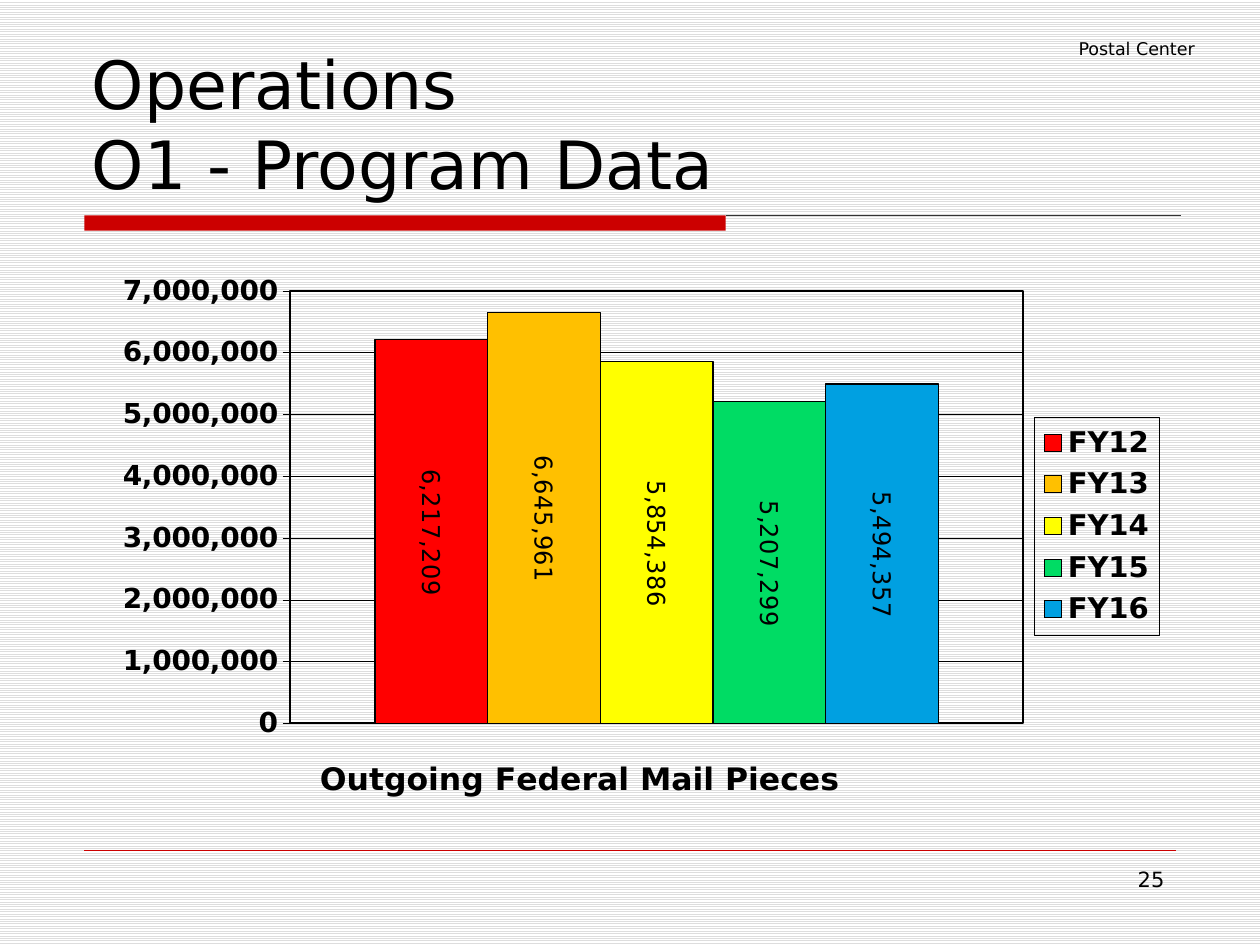
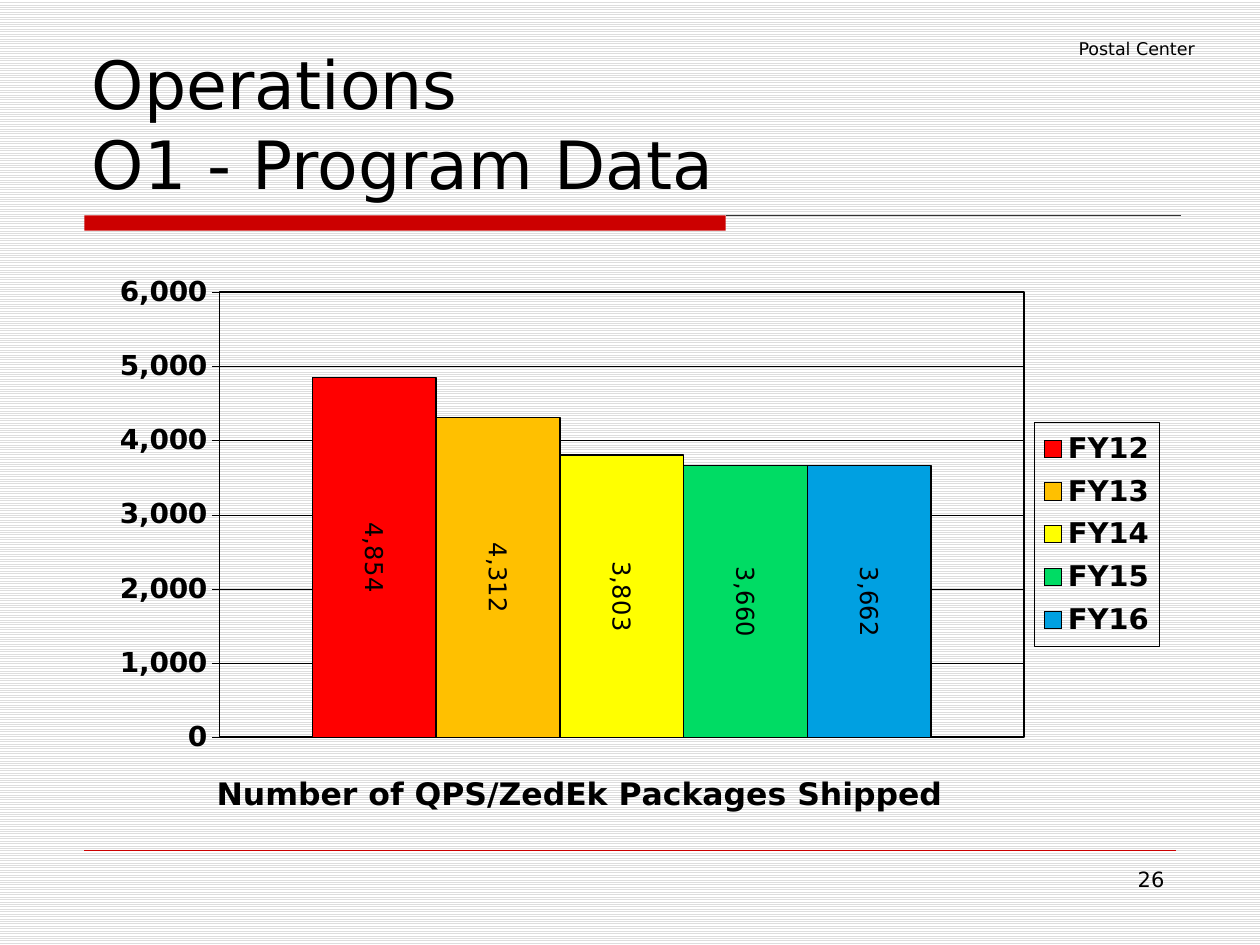
import pptx
import pptx.chart.data
import pptx.dml.color
import pptx.enum.chart
import pptx.enum.dml
import pptx.enum.shapes
import pptx.enum.text
import pptx.oxml
import pptx.oxml.ns
import pptx.util

Inches = pptx.util.Inches
Pt = pptx.util.Pt
qn = pptx.oxml.ns.qn
ALIGN = pptx.enum.text.PP_ALIGN
ANCHOR = pptx.enum.text.MSO_ANCHOR

# Content
HEAD = ("Operations", "O1 - Program Data")
UNIT = "Postal Center"
YEARS = ("FY12", "FY13", "FY14", "FY15", "FY16")
PAGES = [
    {"page": "25", "name": "Outgoing Federal Mail Pieces",
     "vals": (6217209, 6645961, 5854386, 5207299, 5494357),
     "top": 7000000, "step": 1000000, "high": 4.44,
     "plot": (0.188, 0.078, 0.673, 0.788), "spot": (0.21, 0.92)},
    {"page": "26", "name": "Number of QPS/ZedEk Packages Shipped",
     "vals": (4854, 4312, 3803, 3660, 3662),
     "top": 6000, "step": 1000, "high": 4.56,
     "plot": (0.123, 0.078, 0.739, 0.788), "spot": (0.115, 0.92)},
]

# Shared style
FONT = "DejaVu Sans"
COLORS = {"ink": "000000", "rule": "333333", "red": "CC0000",
          "stripe": "DDDDDD", "paper": "FFFFFF",
          "FY12": "FF0000", "FY13": "FFC000", "FY14": "FFFF00",
          "FY15": "00DC64", "FY16": "00A0E1"}
KEY = (0.871, 0.308, 0.115, 0.397)  # legend box, as shares of the chart
LEFT, SPLIT = 0.67, 5.76


def tint(name):
    return pptx.dml.color.RGBColor.from_string(COLORS[name])


def style(font, size, bold=False):
    font.name, font.size, font.bold = FONT, Pt(size), bold
    font.color.rgb = tint("ink")


def stroke(line, name, width):
    line.color.rgb = tint(name)
    line.width = Pt(width)


def rule(slide, x1, x2, y, name, width):
    kind = pptx.enum.shapes.MSO_CONNECTOR.STRAIGHT
    line = slide.shapes.add_connector(
        kind, Inches(x1), Inches(y), Inches(x2), Inches(y))
    stroke(line.line, name, width)
    line._element.spPr.append(pptx.oxml.parse_xml(
        f'<a:effectLst {pptx.oxml.ns.nsdecls("a")}/>'))


def note(slide, text, box, size):
    frame = slide.shapes.add_textbox(*map(Inches, box)).text_frame
    frame.word_wrap = True
    para = frame.paragraphs[0]
    para.alignment = ALIGN.RIGHT
    run = para.add_run()
    run.text = text
    style(run.font, size)


def place(node, spot, inner=False):
    """Give a chart part a fixed spot, in shares of the chart."""
    for old in node.findall(qn("c:layout")):
        node.remove(old)
    tags = ['<c:layoutTarget val="inner"/>'] if inner else []
    tags += [f'<c:{side}Mode val="edge"/>' for side in "xy"]
    tags += [f'<c:{side} val="{val}"/>' for side, val in zip("xywh", spot)]
    new = pptx.oxml.parse_xml(
        f'<c:layout {pptx.oxml.ns.nsdecls("c")}><c:manualLayout>'
        f'{"".join(tags)}</c:manualLayout></c:layout>')
    over = node.find(qn("c:overlay"))
    node.insert(0 if over is None else node.index(over), new)


def frame_box(node, width, after=None):
    """Outline a chart part that has no fill."""
    box = pptx.oxml.parse_xml(
        f'<c:spPr {pptx.oxml.ns.nsdecls("c", "a")}><a:noFill/>'
        f'<a:ln w="{Pt(width)}"><a:solidFill><a:srgbClr val="{COLORS["ink"]}"/>'
        '</a:solidFill></a:ln></c:spPr>')
    if after is None:
        node.append(box)
    else:
        after.addnext(box)


def base(slide, page):
    """Background, title, red band, rules, unit and page number."""
    fill = slide.background.fill
    fill.patterned()
    fill.pattern = pptx.enum.dml.MSO_PATTERN.LIGHT_HORIZONTAL
    fill.fore_color.rgb = tint("stripe")
    fill.back_color.rgb = tint("paper")

    title = slide.shapes.title
    title.left, title.top = Inches(0.63), Inches(0.33)
    title.width, title.height = Inches(8.75), Inches(1.33)
    frame = title.text_frame
    frame.vertical_anchor = ANCHOR.BOTTOM
    frame.auto_size = pptx.enum.text.MSO_AUTO_SIZE.NONE
    para = frame.paragraphs[0]
    para.alignment = ALIGN.LEFT
    for i, text in enumerate(HEAD):
        if i:
            para.add_line_break()
        run = para.add_run()
        run.text = text
        style(run.font, 38)

    band = slide.shapes.add_shape(
        pptx.enum.shapes.MSO_SHAPE.RECTANGLE, Inches(LEFT), Inches(1.71),
        Inches(SPLIT - LEFT), Inches(0.12))
    band.shadow.inherit = False
    band.fill.solid()
    band.fill.fore_color.rgb = tint("red")
    band.line.fill.background()
    rule(slide, SPLIT, 9.37, 1.71, "rule", 0.75)
    rule(slide, LEFT, 9.33, 6.75, "red", 0.25)
    note(slide, UNIT, (7.33, 0.25, 2.25, 0.27), 10)
    note(slide, page, (7.17, 6.83, 2.17, 0.52), 12)


def graph(slide, item):
    data = pptx.chart.data.CategoryChartData(number_format="#,##0")
    data.categories = ["1"]
    for year, val in zip(YEARS, item["vals"]):
        data.add_series(year, [val])
    chart = slide.shapes.add_chart(
        pptx.enum.chart.XL_CHART_TYPE.COLUMN_CLUSTERED, Inches(0.68),
        Inches(1.97), Inches(8.64), Inches(item["high"]), data).chart
    style(chart.font, 18, True)

    # Caption under the plot
    chart.has_title = True
    run = chart.chart_title.text_frame.paragraphs[0].add_run()
    run.text = item["name"]
    style(run.font, 18, True)
    place(chart.chart_title._element, item["spot"])

    # Axes
    chart.category_axis.visible = False
    axis = chart.value_axis
    axis.minimum_scale, axis.maximum_scale = 0, item["top"]
    axis.major_unit = item["step"]
    axis.major_tick_mark = pptx.enum.chart.XL_TICK_MARK.OUTSIDE
    axis.tick_labels.number_format = "#,##0"
    axis.tick_labels.number_format_is_linked = False
    style(axis.tick_labels.font, 16, True)
    stroke(axis.format.line, "ink", 0.25)
    stroke(axis.major_gridlines.format.line, "ink", 0.25)

    # Bars with upright values
    plot = chart.plots[0]
    plot.gap_width, plot.overlap = 150, 0
    plot.vary_by_categories = False
    for bar in plot.series:
        bar.format.fill.solid()
        bar.format.fill.fore_color.rgb = tint(bar.name)
        stroke(bar.format.line, "ink", 0.75)
        marks = bar.data_labels
        marks.show_value = True
        marks.position = pptx.enum.chart.XL_LABEL_POSITION.CENTER
        marks.number_format = "#,##0"
        marks.number_format_is_linked = False
        style(marks.font, 14)
        body = marks._element.find(qn("c:txPr")).find(qn("a:bodyPr"))
        body.set("rot", "5400000")
        body.set("vert", "horz")

    # Legend and plot frame
    chart.has_legend = True
    key = chart.legend
    key.position = pptx.enum.chart.XL_LEGEND_POSITION.RIGHT
    key.include_in_layout = False
    style(key.font, 16.6, True)
    place(key._element, KEY)
    frame_box(key._element, 0.25, key._element.find(qn("c:overlay")))
    area = chart._chartSpace.chart.plotArea
    place(area, item["plot"], inner=True)
    frame_box(area, 1)


def main():
    deck = pptx.Presentation()
    deck.slide_width, deck.slide_height = Inches(10), Inches(7.5)
    for item in PAGES:
        slide = deck.slides.add_slide(deck.slide_layouts[5])
        base(slide, item["page"])
        graph(slide, item)
    deck.save("out.pptx")


if __name__ == "__main__":
    main()
